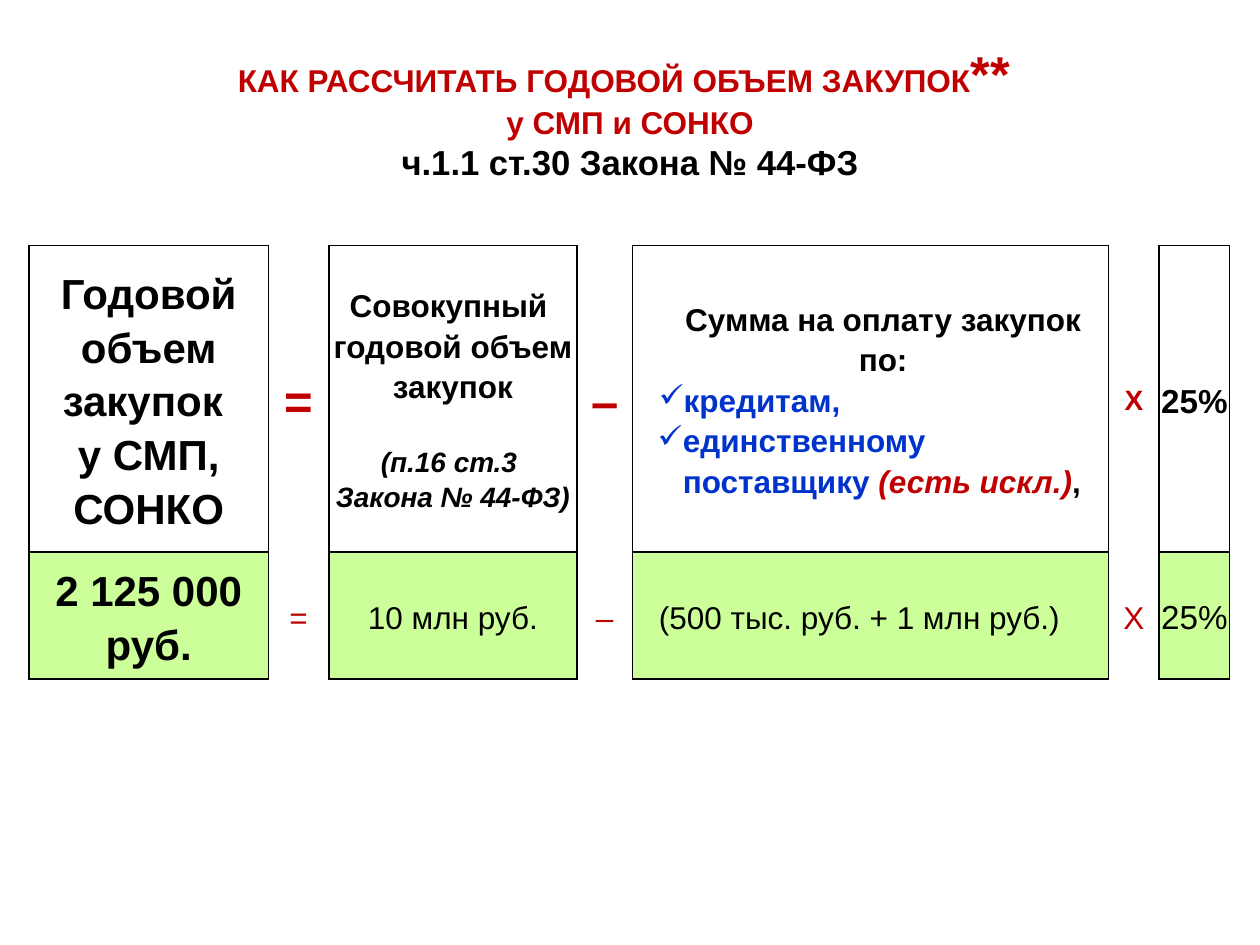
"""Build a slide that explains how the yearly volume of purchases is calculated."""
import pptx
import pptx.dml.color
import pptx.enum.text
import pptx.oxml
import pptx.oxml.ns
import pptx.util
from pptx.util import Inches

RED, BLUE, BLACK, WHITE, GREEN = "C00000", "0033CC", "000000", "FFFFFF", "CCFF99"
CENTER = pptx.enum.text.PP_ALIGN.CENTER
LEFT = pptx.enum.text.PP_ALIGN.LEFT
MIDDLE = pptx.enum.text.MSO_ANCHOR.MIDDLE
NS = pptx.oxml.ns.nsdecls("a")


def rgb(value):
    """Turn a hex string into a colour."""
    return pptx.dml.color.RGBColor.from_string(value)


def add_text(p, text, size=18, color=BLACK, bold=True, italic=False):
    """Add a formatted run to a paragraph."""
    r = p.add_run()
    r.text = text
    r.font.name = "Arial"
    r.font.size = pptx.util.Pt(size)
    r.font.color.rgb = rgb(color)
    r.font.bold = bold
    r.font.italic = italic


prs = pptx.Presentation()
prs.slide_width, prs.slide_height = Inches(10), Inches(7.5)
s = prs.slides.add_slide(prs.slide_layouts[5])

title = s.shapes.title
title.left, title.top = Inches(0.5), Inches(0.3)
title.width, title.height = Inches(9), Inches(1.18)
tf = title.text_frame
tf.word_wrap = True
tf.auto_size = pptx.enum.text.MSO_AUTO_SIZE.NONE
tf.vertical_anchor = MIDDLE
p = tf.paragraphs[0]
p.alignment = CENTER
add_text(p, "КАК РАССЧИТАТЬ\u00a0ГОДОВОЙ ОБЪЕМ ЗАКУПОК", color=RED)
add_text(p, "**", size=28.8, color=RED)
add_text(p, " ", size=25.2, color=RED)
p.add_line_break()
add_text(p, "у СМП и СОНКО", color=RED)
p.add_line_break()
add_text(p, "ч.1.1 ст.30 Закона № 44-ФЗ", size=19.8)

big = {"size": 24}
sign = {"size": 28, "color": RED}
note = {"size": 16, "italic": True}
plain = {"bold": False}
plain_sign = {"bold": False, "color": RED}
blue = {"color": BLUE}

rows = [
    [
        [{"runs": [("Годовой объем закупок ", big)]},
         {"runs": [("у СМП, СОНКО", big)]}],
        [{"runs": [("=", sign)]}],
        [{"runs": [("Совокупный\u00a0", {})]},
         {"runs": [("годовой объем закупок", {})]},
         {"runs": [("(п.16 ст.3 ", note)], "before": 21},
         {"runs": [("Закона № 44-ФЗ)", note)]}],
        [{"runs": [("–", sign)]}],
        [{"runs": [("Сумма на оплату закупок по:", {})], "indent": (0.2, 0)},
         {"runs": [("кредитам,", blue)], "indent": (0.2, 0), "bullet": "✓", "align": LEFT},
         {"runs": [("единственному поставщику ", blue),
                   ("(есть искл.)", {"color": RED, "italic": True}), (",", {})],
          "indent": (0.39, -0.2), "bullet": "✓", "align": LEFT}],
        [{"runs": [("Х", {"size": 16, "color": RED})]}],
        [{"runs": [("25%", {"size": 19})]}],
    ],
    [
        [{"runs": [("2 125 000 руб.", big)]}],
        [{"runs": [("=", plain_sign)]}],
        [{"runs": [("10 млн руб.", plain)]}],
        [{"runs": [("–", plain_sign)]}],
        [{"runs": [("(500 тыс. руб. + 1 млн руб.)", plain)], "indent": (0.2, 0), "align": LEFT}],
        [{"runs": [("Х", plain_sign)]}],
        [{"runs": [("25%", {"size": 19, "bold": False})]}],
    ],
]
widths = [1.9, 0.48, 1.97, 0.44, 3.78, 0.4, 0.56]
heights = [2.43, 1.01]

table = s.shapes.add_table(len(heights), len(widths), Inches(0.23), Inches(1.95),
                           Inches(sum(widths)), Inches(sum(heights))).table
table.first_row = table.horz_banding = False
for column, width in zip(table.columns, widths):
    column.width = Inches(width)
for row, height in zip(table.rows, heights):
    row.height = Inches(height)

for i, row in enumerate(rows):
    for j, paragraphs in enumerate(row):
        is_sign = j % 2 == 1
        cell = table.cell(i, j)
        cell.vertical_anchor = MIDDLE
        cell.margin_left = cell.margin_right = Inches(0.01)
        cell.margin_top = cell.margin_bottom = Inches(0.01)
        cell.fill.solid()
        cell.fill.fore_color.rgb = rgb(GREEN if i == 1 and not is_sign else WHITE)

        tcPr = cell._tc.get_or_add_tcPr()
        for k, side in enumerate("LRTB"):
            if is_sign and side in "TB":
                line = "<a:noFill/>"
            else:
                line = f'<a:solidFill><a:srgbClr val="{BLACK}"/></a:solidFill>'
            tcPr.insert(k, pptx.oxml.parse_xml(f'<a:ln{side} {NS} w="12700">{line}</a:ln{side}>'))

        tf = cell.text_frame
        for k, item in enumerate(paragraphs):
            p = tf.add_paragraph() if k else tf.paragraphs[0]
            p.alignment = item.get("align", CENTER)
            p.line_spacing = 1.15
            p.space_before = pptx.util.Pt(item.get("before", 0))
            pPr = p._p.get_or_add_pPr()
            if "indent" in item:
                margin, indent = item["indent"]
                pPr.set("marL", str(Inches(margin)))
                pPr.set("indent", str(Inches(indent)))
            if "bullet" in item:
                pPr.append(pptx.oxml.parse_xml(f'<a:buChar {NS} char="{item["bullet"]}"/>'))
            for text, style in item["runs"]:
                add_text(p, text, **style)

prs.save("out.pptx")
